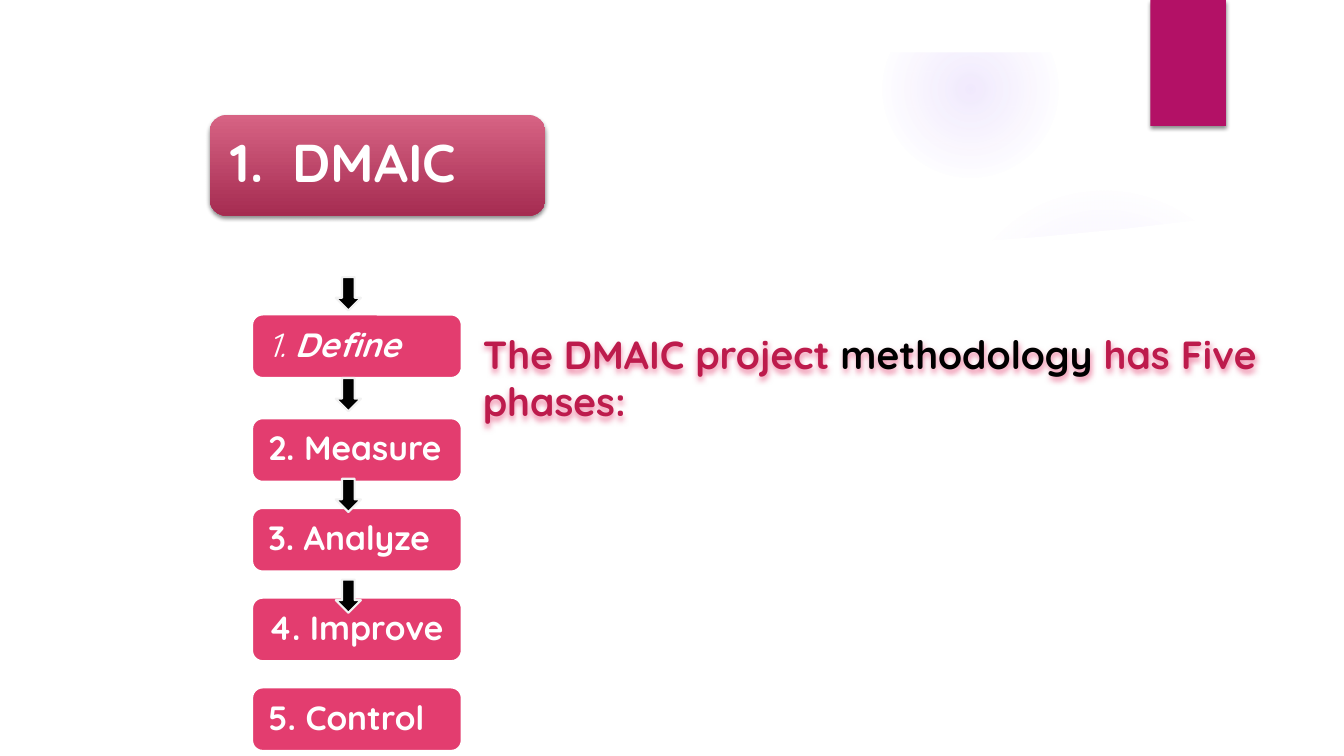
from dataclasses import dataclass

import pptx
import pptx.dml.color
import pptx.enum.shapes
import pptx.enum.text
import pptx.oxml
import pptx.oxml.ns
import pptx.util
from pptx.util import Inches

SHAPES = pptx.enum.shapes.MSO_SHAPE
ANCHOR = pptx.enum.text.MSO_ANCHOR
ALIGN = pptx.enum.text.PP_ALIGN


@dataclass(frozen=True)
class Theme:
    font: str = "Quicksand"
    white: str = "FFFFFF"
    black: str = "000000"
    glow: str = "9B6BF2"
    ribbon: str = "B31166"
    banner_top: str = "D76384"
    banner_bottom: str = "A52C51"
    step: str = "E33D6F"
    statement: str = "BD1B4C"
    arrow_line: str = "F2F2F2"
    title_size: int = 38
    statement_size: int = 28
    step_size: int = 24


THEME = Theme()


def rgb(color):
    return pptx.dml.color.RGBColor.from_string(color)


def add_xml(parent, xml):
    namespace = pptx.oxml.ns.nsdecls("a")
    parent.append(pptx.oxml.parse_xml(xml.replace(">", f" {namespace}>", 1)))


def add_shadow(shape, color, alpha, blur, distance):
    """Downward shadow; blur and distance in points."""
    properties = shape._element.spPr
    for effects in properties.findall(pptx.oxml.ns.qn("a:effectLst")):
        properties.remove(effects)
    add_xml(properties, (
        f'<a:effectLst><a:outerShdw blurRad="{pptx.util.Pt(blur)}" '
        f'dist="{pptx.util.Pt(distance)}" dir="5400000" algn="ctr" rotWithShape="0">'
        f'<a:srgbClr val="{color}"><a:alpha val="{alpha * 1000}"/></a:srgbClr>'
        '</a:outerShdw></a:effectLst>'))


def style(shape, fill, line=None):
    shape.shadow.inherit = False
    shape.fill.solid()
    shape.fill.fore_color.rgb = rgb(fill)
    if line:
        shape.line.color.rgb = rgb(line)
        shape.line.width = pptx.util.Pt(1.5)
    else:
        shape.line.fill.background()


def add_box(slide, kind, left, top, width, height, fill, line=None):
    shape = slide.shapes.add_shape(
        kind, Inches(left), Inches(top), Inches(width), Inches(height))
    style(shape, fill, line)
    return shape


def add_glow(slide, left, top, size, stops):
    """Circle fading outwards; stops are (position, opacity) in percent."""
    glow = add_box(slide, SHAPES.OVAL, left, top, size, size, THEME.glow)
    properties = glow._element.spPr
    solid = properties.find(pptx.oxml.ns.qn("a:solidFill"))
    stop_xml = "".join(
        f'<a:gs pos="{position * 1000}"><a:srgbClr val="{THEME.glow}">'
        f'<a:alpha val="{alpha * 1000}"/></a:srgbClr></a:gs>'
        for position, alpha in stops)
    add_xml(properties, (
        f'<a:gradFill><a:gsLst>{stop_xml}</a:gsLst><a:path path="circle">'
        '<a:fillToRect l="50000" t="50000" r="50000" b="50000"/></a:path></a:gradFill>'))
    properties.replace(solid, properties[-1])


def add_panel(slide):
    """White panel with a curved top edge, covering the lower part of the glow."""
    edge = [(0.5, 2.04), (2.16, 2.24), (4.01, 2.38), (5.59, 2.46), (7.08, 2.48),
            (8.4, 2.46), (9.49, 2.41), (10.32, 2.35), (11.16, 2.27), (12, 2.17),
            (12.84, 2.04), (12.84, 7), (0.5, 7)]
    points = [(Inches(x), Inches(y)) for x, y in edge]
    builder = slide.shapes.build_freeform(*points[0])
    builder.add_line_segments(points[1:], close=True)
    style(builder.convert_to_shape(), THEME.white)


def set_up_text(frame, inset, anchor):
    frame.word_wrap = True
    frame.auto_size = pptx.enum.text.MSO_AUTO_SIZE.NONE
    frame.vertical_anchor = anchor
    frame.margin_left = frame.margin_right = Inches(inset)
    frame.margin_top = frame.margin_bottom = Inches(inset)
    paragraph = frame.paragraphs[0]
    paragraph.alignment = ALIGN.LEFT
    return paragraph


def add_run(paragraph, text, size, color, bold=True, italic=False):
    run = paragraph.add_run()
    run.text = text
    run.font.name = THEME.font
    run.font.size = pptx.util.Pt(size)
    run.font.color.rgb = rgb(color)
    run.font.bold = bold
    run.font.italic = italic


def add_title(slide):
    banner = add_box(slide, SHAPES.ROUNDED_RECTANGLE, 2.08, 1.14, 3.33, 1, THEME.banner_top)
    banner.fill.gradient()
    banner.fill.gradient_angle = 270
    for stop, color in zip(banner.fill.gradient_stops, (THEME.banner_top, THEME.banner_bottom)):
        stop.color.rgb = rgb(color)
    add_shadow(banner, THEME.black, 45, 3, 2)

    title = slide.shapes.title
    title.left, title.top = Inches(2.13), Inches(1.19)
    title.width, title.height = Inches(3.24), Inches(0.9)
    slide.shapes._spTree.append(title._element)
    paragraph = set_up_text(title.text_frame, 0.16, ANCHOR.MIDDLE)
    paragraph.line_spacing = 0.9
    # Tab stop between the number and the name
    add_xml(paragraph._p.get_or_add_pPr(),
            f'<a:tabLst><a:tab pos="{Inches(0.61)}" algn="l"/></a:tabLst>')
    add_run(paragraph, "1.\tDMAIC", THEME.title_size, THEME.white)


def add_statement(slide):
    box = slide.shapes.add_textbox(Inches(4.69), Inches(3.23), Inches(8.75), Inches(1.04))
    paragraph = set_up_text(box.text_frame, 0.1, ANCHOR.TOP)
    box.text_frame.margin_top = box.text_frame.margin_bottom = Inches(0.05)
    for text, color in (("The DMAIC project ", THEME.statement),
                        ("methodology", THEME.black),
                        (" has Five phases:", THEME.statement)):
        add_run(paragraph, text, THEME.statement_size, color)
    add_shadow(box, THEME.step, 60, 4, 2)


def add_step(slide, top, runs):
    step = add_box(slide, SHAPES.ROUNDED_RECTANGLE, 2.5, top, 2.08, 0.63,
                   THEME.step, THEME.white)
    paragraph = set_up_text(step.text_frame, 0.13, ANCHOR.MIDDLE)
    paragraph.line_spacing = 0.9
    for text, bold, italic in runs:
        add_run(paragraph, text, THEME.step_size, THEME.white, bold, italic)


def main():
    presentation = pptx.Presentation()
    presentation.slide_width = Inches(13.33)
    presentation.slide_height = Inches(7.5)
    slide = presentation.slides.add_slide(presentation.slide_layouts[5])

    # Background glows, trimmed by white areas
    add_glow(slide, 9.41, 1.83, 3.08, [(0, 7), (36, 6), (69, 0)])
    add_glow(slide, 8.75, 0.01, 1.75, [(0, 14), (36, 7), (73, 0)])
    add_panel(slide)
    add_box(slide, SHAPES.RECTANGLE, 0, 0, 13.33, 0.52, THEME.white)
    ribbon = add_box(slide, SHAPES.RECTANGLE, 11.41, 0, 0.75, 1.25, THEME.ribbon)
    add_shadow(ribbon, THEME.black, 45, 3, 2)

    # Heading and statement
    add_title(slide)
    add_statement(slide)

    # Five phases, the first one set apart
    add_step(slide, 3.12, [("1. ", False, True), ("Define", True, True)])
    for index, label in enumerate(("2. Measure", "3. Analyze", "4. Improve", "5. Control")):
        add_step(slide, 4.15 + 0.89 * index, [(label, True, False)])

    # Arrows between the phases
    for index in range(4):
        add_box(slide, SHAPES.DOWN_ARROW, 3.33, 2.75 + index, 0.25, 0.33,
                THEME.black, THEME.arrow_line)

    presentation.save("out.pptx")


if __name__ == "__main__":
    main()
